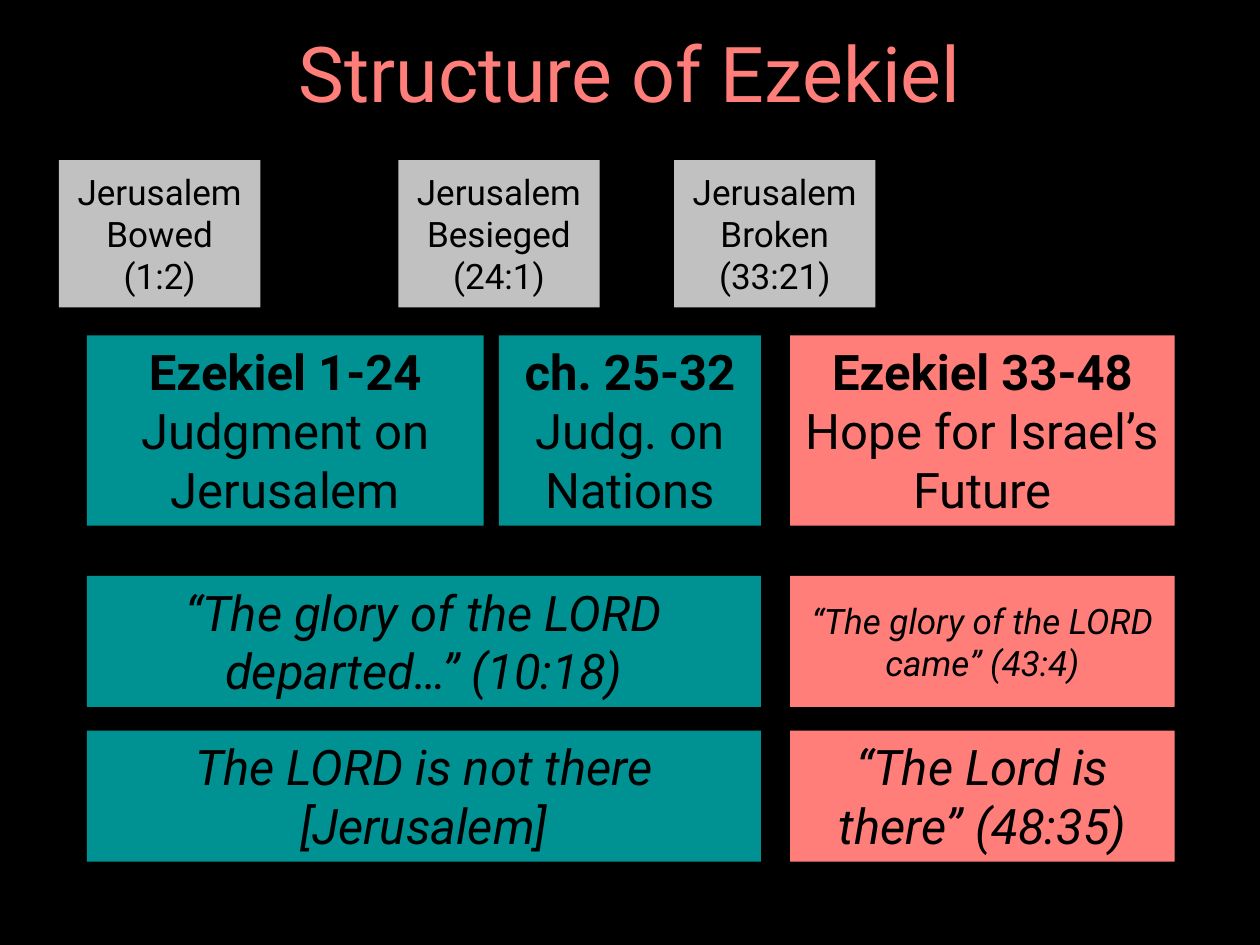
"""Build a one-slide overview of the structure of Ezekiel."""
from pptx import Presentation
from pptx.dml.color import RGBColor
from pptx.enum.shapes import MSO_SHAPE as Shape
from pptx.enum.text import MSO_ANCHOR as Anchor, MSO_AUTO_SIZE as AutoSize, PP_ALIGN as Align
from pptx.util import Cm, Pt

COLORS = {"background": "000000", "text": "000000", "judgment": "009193",
          "hope": "FF7E79", "event": "C1C1C1"}
FONT = "Roboto"
LEFT, NATIONS_LEFT, HOPE_LEFT = 1.75, 10.06, 15.93
JUDGMENT_WIDTH, HOPE_WIDTH = 13.59, 7.75


def color(name):
    return RGBColor.from_string(COLORS[name])


def write(para, text, size=28, fill="text", bold=False, italic=False):
    para.alignment = Align.CENTER
    span = para.add_run()
    span.text = text
    span.font.name = FONT
    span.font.size = Pt(size)
    span.font.bold = bold
    span.font.italic = italic
    span.font.color.rgb = color(fill)


class SlideBuilder:
    def __init__(self, deck):
        self.page = deck.slides.add_slide(deck.slide_layouts[5])
        background = self.page.background.fill
        background.solid()
        background.fore_color.rgb = color("background")

    def place(self, box, left, top, width, height):
        box.left, box.top, box.width, box.height = map(Cm, (left, top, width, height))

    def title(self, text, *bounds):
        box = self.page.shapes.title
        self.place(box, *bounds)
        frame = box.text_frame
        frame.auto_size = AutoSize.NONE
        frame.vertical_anchor = Anchor.MIDDLE
        para = frame.paragraphs[0]
        para.line_spacing = 0.9
        write(para, text, size=44, fill="hope")

    def block(self, lines, bounds, fill, anchor=Anchor.TOP, bold_first=False, **style):
        box = self.page.shapes.add_shape(Shape.RECTANGLE, *map(Cm, bounds))
        box.shadow.inherit = False
        box.fill.solid()
        box.fill.fore_color.rgb = color(fill)
        box.line.fill.background()
        frame = box.text_frame
        frame.word_wrap = True
        frame.vertical_anchor = anchor
        for index, text in enumerate(lines):
            para = frame.add_paragraph() if index else frame.paragraphs[0]
            write(para, text, bold=bold_first and index == 0, **style)


def main():
    deck = Presentation()
    deck.slide_width, deck.slide_height = Cm(25.4), Cm(19.05)
    slide = SlideBuilder(deck)
    slide.title("Structure of Ezekiel", LEFT, 0.41, 21.9, 2.29)

    events = [("Jerusalem Bowed", "(1:2)", 1.19),
              ("Jerusalem Besieged", "(24:1)", 8.03),
              ("Jerusalem Broken", "(33:21)", 13.59)]
    for name, verse, left in events:
        slide.block([name, verse], (left, 3.23, 4.06, 2.97), "event", Anchor.MIDDLE, size=20)

    sections = [("Ezekiel 1-24", "Judgment on Jerusalem", LEFT, 8, "judgment"),
                ("ch. 25-32", "Judg. on Nations", NATIONS_LEFT, 5.28, "judgment"),
                ("Ezekiel 33-48", "Hope for Israel’s Future", HOPE_LEFT, HOPE_WIDTH, "hope")]
    for chapters, theme, left, width, fill in sections:
        slide.block([chapters, theme], (left, 6.76, width, 3.84), fill, bold_first=True)

    contrasts = [("“The glory of the LORD departed…” (10:18)",
                  "“The glory of the LORD came” (43:4)", 11.61, 20, Anchor.MIDDLE),
                 ("The LORD is not there [Jerusalem]",
                  "“The Lord is there” (48:35)", 14.73, 28, Anchor.TOP)]
    for judgment, hope, top, hope_size, anchor in contrasts:
        slide.block([judgment], (LEFT, top, JUDGMENT_WIDTH, 2.64), "judgment", italic=True)
        slide.block([hope], (HOPE_LEFT, top, HOPE_WIDTH, 2.64), "hope", anchor,
                    size=hope_size, italic=True)

    deck.save("out.pptx")


if __name__ == "__main__":
    main()
